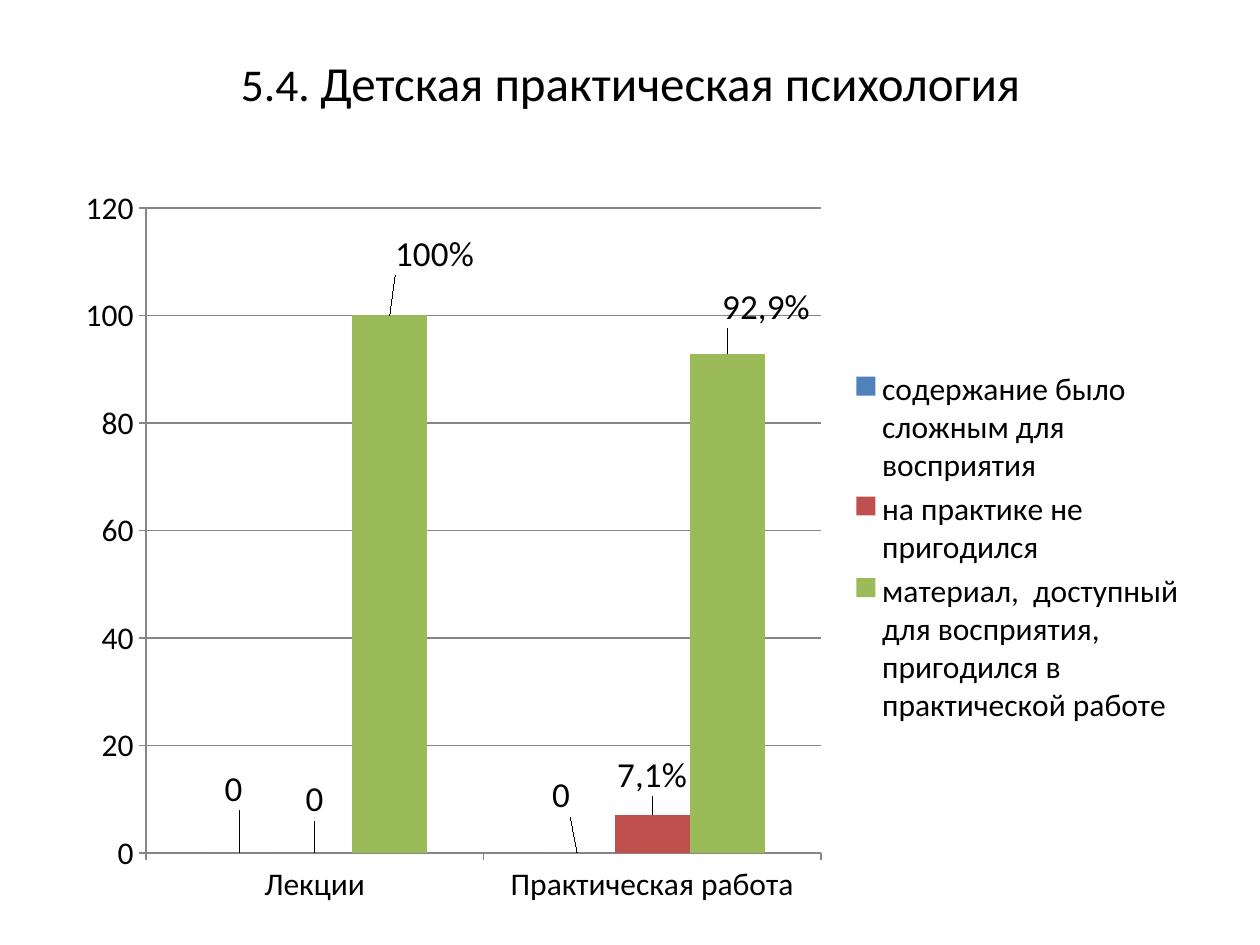
from lxml.etree import SubElement
from pptx import Presentation
from pptx.chart.data import CategoryChartData
from pptx.dml.color import RGBColor
from pptx.enum.chart import XL_CHART_TYPE, XL_LABEL_POSITION, XL_LEGEND_POSITION, XL_TICK_MARK
from pptx.enum.text import MSO_ANCHOR, PP_ALIGN
from pptx.oxml.ns import qn
from pptx.util import Emu, Pt

PX = 914400 // 126
FONT = "Calibri"
BLACK = "000000"
GRAY = "868686"

TITLE = [("5.4. ", 26), ("Детская практическая психология", 28)]
CATEGORIES = ["Лекции", "Практическая работа"]
# name, colour, values, custom label texts, label shifts in px
SERIES = [
    ("содержание было сложным для восприятия", "4F81BD",
     (0, 0), (None, None), ((-6, -37), (-16, -31))),
    ("на практике не пригодился", "C0504D",
     (0, 7.1), (None, "7,1%"), ((0, -27), (0, -13))),
    ("материал,  доступный для восприятия, пригодился в практической работе", "9BBB59",
     (100, 92.9), ("100%", "92,9%"), ((45, -35), (39, -20))),
]
TITLE_BOX = (25, 38, 1211, 87)
CHART_BOX = (63, 175, 1134, 745)
PLOT_BOX = (146, 208, 675, 645)
LEGEND_BOX = (845, 365, 345, 365)


def px(*lengths):
    return [Emu(length * PX) for length in lengths]


def color(value):
    return RGBColor.from_string(value)


def set_font(font, size, value=BLACK):
    font.name, font.size, font.bold = FONT, Pt(size), False
    font.color.rgb = color(value)


def add_text(paragraph, text, size, value=BLACK):
    run = paragraph.add_run()
    run.text = text
    set_font(run.font, size, value)


def set_layout(parent, index, **values):
    """Place a manual layout in a chart element, at the given child index."""
    for old in parent.findall(qn("c:layout")):
        parent.remove(old)
    layout = SubElement(parent, qn("c:layout"))
    manual = SubElement(layout, qn("c:manualLayout"))
    for name, value in values.items():
        SubElement(manual, qn("c:" + name)).set("val", str(value))
    parent.insert(index, layout)


def fractions(box):
    left, top, width, height = CHART_BOX
    return dict(xMode="edge", yMode="edge",
                x=round((box[0] - left) / width, 4), y=round((box[1] - top) / height, 4),
                w=round(box[2] / width, 4), h=round(box[3] / height, 4))


presentation = Presentation()
presentation.slide_width, presentation.slide_height = px(1260, 945)
slide = presentation.slides.add_slide(presentation.slide_layouts[5])

# Title
title = slide.shapes.title
title.left, title.top, title.width, title.height = px(*TITLE_BOX)
title.text_frame.vertical_anchor = MSO_ANCHOR.MIDDLE
title_paragraph = title.text_frame.paragraphs[0]
title_paragraph.alignment = PP_ALIGN.CENTER
for text, size in TITLE:
    add_text(title_paragraph, text, size)

# Chart
data = CategoryChartData()
data.categories = CATEGORIES
for name, _, values, _, _ in SERIES:
    data.add_series(name, values)
chart = slide.shapes.add_chart(XL_CHART_TYPE.COLUMN_CLUSTERED, *px(*CHART_BOX), data).chart
chart.has_title = False
set_font(chart.font, 18)
plot = chart.plots[0]
plot.gap_width, plot.overlap, plot.vary_by_categories = 150, 0, False

# Axes
value_axis = chart.value_axis
value_axis.minimum_scale, value_axis.maximum_scale, value_axis.major_unit = 0, 120, 20
value_axis.has_major_gridlines = True
for axis in (chart.category_axis, value_axis):
    axis.major_tick_mark = XL_TICK_MARK.OUTSIDE
for lines in (chart.category_axis, value_axis, value_axis.major_gridlines):
    lines.format.line.color.rgb = color(GRAY)
    lines.format.line.width = Pt(0.75)

# Legend and plot area
chart.has_legend = True
chart.legend.position = XL_LEGEND_POSITION.RIGHT
chart.legend.include_in_layout = False
set_font(chart.legend.font, 18)
chart_space = chart._chartSpace
plot_area = next(chart_space.iter(qn("c:plotArea")))
set_layout(plot_area, 0, layoutTarget="inner", **fractions(PLOT_BOX))
set_layout(next(chart_space.iter(qn("c:legend"))), 1, **fractions(LEGEND_BOX))

# Columns and their shifted labels
for series, bars, (_, fill, _, texts, shifts) in zip(
        plot.series, plot_area.iter(qn("c:ser")), SERIES):
    series.format.fill.solid()
    series.format.fill.fore_color.rgb = color(fill)
    series.invert_if_negative = False
    series.data_labels.show_value = True
    set_font(series.data_labels.font, 20)
    for index, text in enumerate(texts):
        label = series.points[index].data_label
        if text:
            add_text(label.text_frame.paragraphs[0], text, 20)
        else:
            set_font(label.font, 20)
        label.position = XL_LABEL_POSITION.OUTSIDE_END
    for element, (shift_x, shift_y) in zip(bars.iter(qn("c:dLbl")), shifts):
        set_layout(element, 1, x=round(shift_x / CHART_BOX[2], 4),
                   y=round(shift_y / CHART_BOX[3], 4))

presentation.save("out.pptx")
